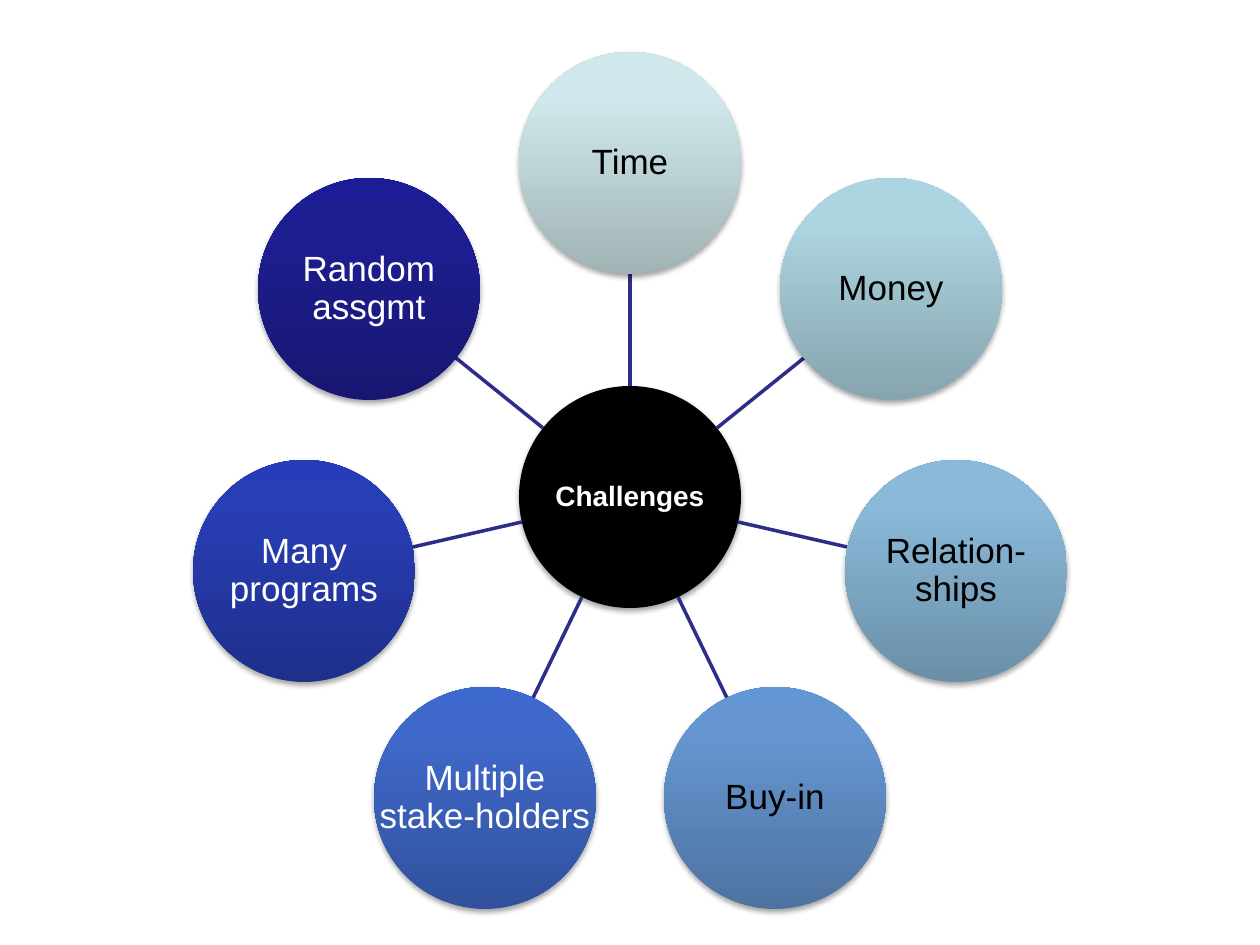
import math
from copy import deepcopy

from lxml import etree
from pptx import Presentation
from pptx import util as u
from pptx.dml.color import RGBColor
from pptx.enum import shapes, text
from pptx.oxml import parse_xml
from pptx.oxml.ns import nsdecls, qn

PX = 914400 // 126
BLACK = RGBColor(0, 0, 0)
WHITE = RGBColor(255, 255, 255)
SPOKE = RGBColor(0x2D, 0x2D, 0x8A)

HUB = "Challenges"
CHALLENGES = [
    ("Time", BLACK, ("A0B3B5", "D0E8EB", "D1EAEC")),
    ("Money", BLACK, ("86A4AD", "ADD4E1", "ADD6E3")),
    ("Relation-ships", BLACK, ("6A8FA7", "8AB9D9", "89BADB")),
    ("Buy-in", BLACK, ("4E73A1", "6596D1", "6396D4")),
    ("Multiple\vstake-holders", WHITE, ("31519C", "3F69CB", "3D69CE")),
    ("Many programs", WHITE, ("1F2F8C", "283EB5", "263CB9")),
    ("Random assgmt", WHITE, ("171771", "1E1E93", "1C1C96")),
]
STOP_POSITIONS = (0, 0.8, 1)

CENTER_X, CENTER_Y = 630, 497
RADIUS = 111
ORBIT = 334

SHADOW = (
    f'<a:outerShdw {nsdecls("a")} blurRad="39370" dist="22860" dir="5400000" rotWithShape="0">'
    '<a:srgbClr val="000000"><a:alpha val="35000"/></a:srgbClr></a:outerShdw>'
)
FRAME_FORMAT = {
    "vertical_anchor": text.MSO_ANCHOR.MIDDLE,
    "margin_left": PX, "margin_right": PX, "margin_top": PX, "margin_bottom": PX,
}


def polar(angle, distance):
    return (round(CENTER_X + distance * math.sin(angle)),
            round(CENTER_Y - distance * math.cos(angle)))


def fill_gradient(shape, colors):
    shape.fill.gradient()
    shape.fill.gradient_angle = 90
    stop_list = shape._element.spPr.find(".//" + qn("a:gsLst"))
    stop_list.insert(1, deepcopy(stop_list[0]))
    for stop, position, color in zip(shape.fill.gradient_stops, STOP_POSITIONS, colors):
        stop.position = position
        stop.color.rgb = RGBColor.from_string(color)


def add_circle(slide, center, label, font_format, font_color):
    x, y = center
    shape = slide.shapes.add_shape(
        shapes.MSO_SHAPE.OVAL, (x - RADIUS) * PX, (y - RADIUS) * PX,
        2 * RADIUS * PX, 2 * RADIUS * PX)
    shape.line.fill.background()
    shape.shadow.inherit = False
    shape._element.spPr.find(qn("a:effectLst")).append(parse_xml(SHADOW))
    frame = shape.text_frame
    for name, value in FRAME_FORMAT.items():
        setattr(frame, name, value)
    frame.word_wrap = "\v" not in label
    paragraph = frame.paragraphs[0]
    paragraph.text = label
    paragraph.alignment = text.PP_ALIGN.CENTER
    paragraph.line_spacing = 0.9
    for name, value in font_format.items():
        setattr(paragraph.font, name, value)
    paragraph.font.color.rgb = font_color
    return shape


def add_spoke(slide, angle):
    start = polar(angle, RADIUS)
    end = polar(angle, ORBIT - RADIUS)
    spoke = slide.shapes.add_connector(
        shapes.MSO_CONNECTOR.STRAIGHT, *(value * PX for value in start + end))
    spoke.line.color.rgb = SPOKE
    spoke.line.width = u.Pt(2)
    etree.SubElement(spoke._element.spPr, qn("a:effectLst"))


def main():
    presentation = Presentation()
    presentation.slide_width = u.Inches(10)
    presentation.slide_height = u.Inches(7.5)
    slide = presentation.slides.add_slide(presentation.slide_layouts[6])

    hub = add_circle(slide, (CENTER_X, CENTER_Y), HUB,
                     {"name": "Arial", "size": u.Pt(16), "bold": True}, WHITE)
    hub.fill.solid()
    hub.fill.fore_color.rgb = BLACK

    for index, (label, font_color, colors) in enumerate(CHALLENGES):
        angle = index * math.tau / len(CHALLENGES)
        add_spoke(slide, angle)
        circle = add_circle(slide, polar(angle, ORBIT), label,
                            {"name": "Arial", "size": u.Pt(20)}, font_color)
        fill_gradient(circle, colors)

    presentation.save("out.pptx")


if __name__ == "__main__":
    main()
